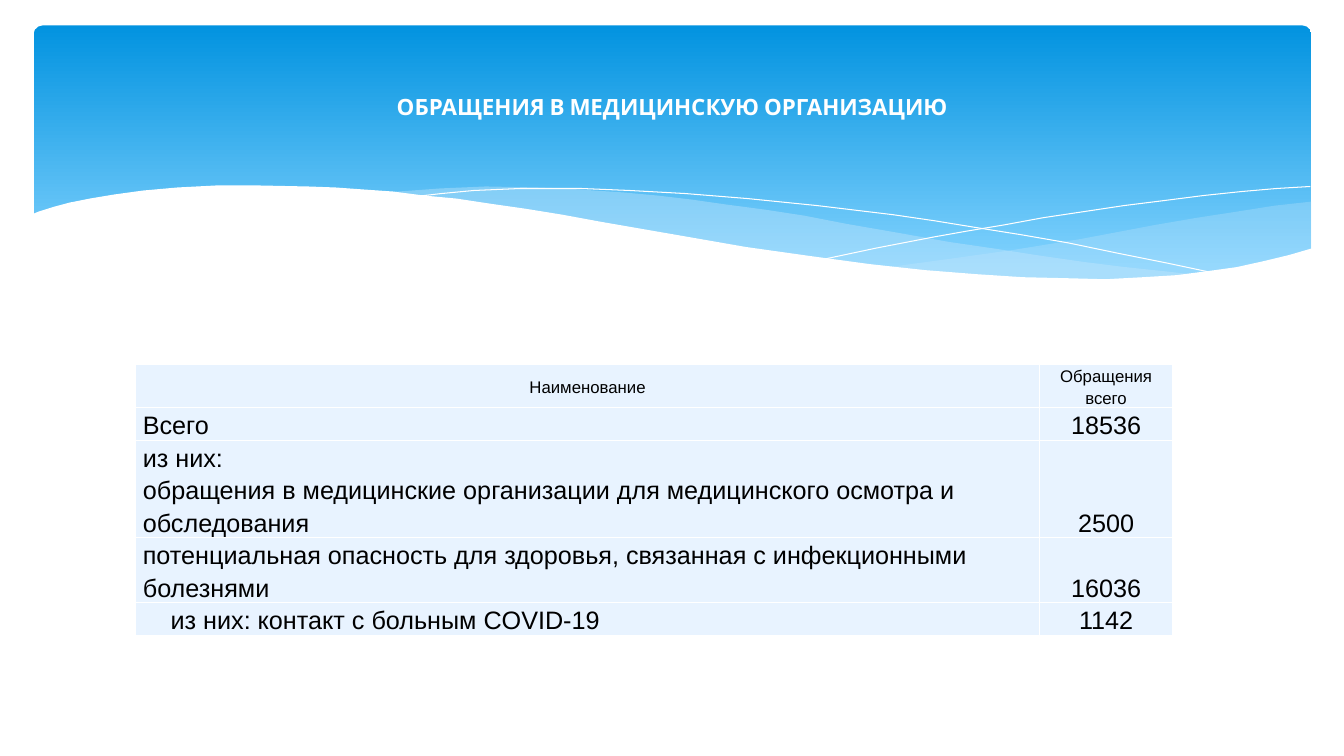
import dataclasses

import pptx
import pptx.dml.color
import pptx.enum.shapes
import pptx.enum.text
import pptx.oxml
import pptx.oxml.ns
import pptx.util
from pptx.util import Cm

ALIGN = pptx.enum.text.PP_ALIGN
ANCHOR = pptx.enum.text.MSO_ANCHOR


@dataclasses.dataclass(frozen=True)
class Theme:
    white: str = "FFFFFF"
    black: str = "000000"
    sky_top: str = "0293E0"
    sky_bottom: str = "83D3FE"
    wave: str = "C6E7FC"
    cell: str = "E8F3FF"
    title_font: str = "Cabin"
    table_font: str = "Arial"
    title_size: int = 16
    head_size: int = 12
    body_size: int = 18


# Wave outlines, in hundredths of an inch
RIGHT_WAVE = [
    (1301, 200), (1265, 204), (1227, 210), (1188, 216), (1147, 223), (1073, 237),
    (1005, 248), (941, 257), (882, 265), (921, 269), (958, 272), (993, 275),
    (1025, 277), (1071, 278), (1113, 277), (1151, 275), (1186, 272), (1218, 267),
    (1247, 262), (1284, 252), (1301, 247),
]
LONG_WAVE = [
    (1190, 273), (1154, 269), (1116, 265), (1076, 260), (1034, 254), (989, 247),
    (941, 240), (891, 231), (839, 222), (798, 214), (759, 208), (721, 203),
    (686, 198), (652, 194), (619, 191), (589, 189), (560, 187), (532, 186),
    (482, 185), (437, 187), (382, 191), (431, 196), (483, 203), (539, 211),
    (599, 222), (654, 232), (706, 240), (755, 248), (802, 255), (846, 261),
    (887, 266), (926, 270), (963, 274), (998, 276), (1046, 278), (1104, 278),
    (1143, 277), (1190, 273),
]
FALLING_LINE = [
    (412, 195), (438, 192), (470, 189), (516, 187), (577, 187), (625, 189),
    (680, 192), (742, 197), (811, 204), (886, 213), (927, 219), (970, 226),
    (1014, 233), (1060, 241), (1108, 251), (1158, 261), (1210, 272),
]
RISING_LINE = [
    (818, 257), (870, 246), (927, 235), (961, 229), (997, 223), (1035, 216),
    (1075, 210), (1115, 204), (1155, 199), (1194, 194), (1232, 190),
    (1267, 187), (1300, 185),
]
WHITE_WAVE = [
    (1303, 246), (1279, 253), (1254, 259), (1227, 265), (1198, 269), (1167, 273),
    (1134, 275), (1097, 277), (1058, 276), (1015, 275), (969, 272), (918, 268),
    (863, 262), (804, 254), (740, 245), (671, 233), (596, 220), (558, 213),
    (521, 207), (486, 202), (453, 197), (421, 194), (390, 190), (361, 188),
    (333, 186), (306, 185), (258, 184), (214, 184), (176, 186), (142, 189),
    (113, 193), (89, 197), (69, 201), (54, 205), (38, 210), (31, 213),
    (31, 329), (1303, 329),
]

COLUMNS = [22.78, 3.35]
ROW_HEIGHTS = [1.07, 0.82, 2.46, 1.63, 0.82]
ROWS = [
    ("Наименование", "Обращения\nвсего"),
    ("Всего", "18536"),
    ("из них:\nобращения в медицинские организации для медицинского осмотра "
     "и обследования", "2500"),
    ("потенциальная опасность для здоровья, связанная с инфекционными болезнями",
     "16036"),
    ("из них: контакт с больным COVID-19", "1142"),
]


def rgb(value):
    return pptx.dml.color.RGBColor.from_string(value)


class SlideBuilder:
    def __init__(self, page, theme):
        self.page = page
        self.theme = theme

    def format_text(self, frame, font, size, color, align, bold=False, spacing=None):
        for para in frame.paragraphs:
            para.alignment = align
            para.line_spacing = spacing
            for span in para.runs:
                span.font.name = font
                span.font.size = pptx.util.Pt(size)
                span.font.bold = bold
                span.font.color.rgb = rgb(color)

    def backdrop(self, left, top, width, height):
        box = self.page.shapes.add_shape(
            pptx.enum.shapes.MSO_SHAPE.ROUNDED_RECTANGLE,
            Cm(left), Cm(top), Cm(width), Cm(height))
        box.adjustments[0] = 0.034
        box.shadow.inherit = False
        box.line.fill.background()
        box.fill.gradient()
        box.fill.gradient_angle = 270
        colors = (self.theme.sky_top, self.theme.sky_bottom)
        for stop, color, position in zip(box.fill.gradient_stops, colors, (0, 0.9)):
            stop.color.rgb = rgb(color)
            stop.position = position

    def outline(self, points, closed):
        builder = self.page.shapes.build_freeform(*points[0], scale=Cm(0.0254))
        builder.add_line_segments(points[1:], close=closed)
        shape = builder.convert_to_shape()
        shape.shadow.inherit = False
        return shape

    def wave(self, points, color, opacity=100):
        shape = self.outline(points, True)
        shape.line.fill.background()
        shape.fill.solid()
        shape.fill.fore_color.rgb = rgb(color)
        if opacity < 100:
            tone = shape._element.spPr.find(".//" + pptx.oxml.ns.qn("a:srgbClr"))
            tone.append(pptx.oxml.parse_xml(
                f'<a:alpha {pptx.oxml.ns.nsdecls("a")} val="{opacity * 1000}"/>'))

    def curve(self, points):
        shape = self.outline(points, False)
        shape.fill.background()
        shape.line.color.rgb = rgb(self.theme.white)
        shape.line.width = 0

    def title(self, text, left, top, width, height):
        box = self.page.shapes.title
        box.left, box.top, box.width, box.height = map(Cm, (left, top, width, height))
        frame = box.text_frame
        frame.text = text
        frame.vertical_anchor = ANCHOR.MIDDLE
        self.format_text(frame, self.theme.title_font, self.theme.title_size,
                         self.theme.white, ALIGN.CENTER, bold=True)
        # Bring the title in front of the waves
        box._element.getparent().append(box._element)

    def border(self, cell):
        properties = cell._tc.get_or_add_tcPr()
        for index, side in enumerate(("lnL", "lnR", "lnT", "lnB")):
            properties.insert(index, pptx.oxml.parse_xml(
                f'<a:{side} {pptx.oxml.ns.nsdecls("a")} w="12700"><a:solidFill>'
                f'<a:srgbClr val="{self.theme.white}"/></a:solidFill></a:{side}>'))

    def table(self, rows, left, top, columns, heights):
        grid = self.page.shapes.add_table(
            len(rows), len(columns), Cm(left), Cm(top),
            Cm(sum(columns)), Cm(sum(heights))).table
        for column, width in zip(grid.columns, columns):
            column.width = Cm(width)
        for r, (texts, height) in enumerate(zip(rows, heights)):
            grid.rows[r].height = Cm(height)
            for c, text in enumerate(texts):
                cell = grid.cell(r, c)
                cell.text_frame.text = text
                cell.margin_left = cell.margin_right = Cm(0.18)
                cell.margin_top = cell.margin_bottom = 0
                cell.vertical_anchor = ANCHOR.BOTTOM if r and c else ANCHOR.MIDDLE
                cell.fill.solid()
                cell.fill.fore_color.rgb = rgb(self.theme.cell)
                size = self.theme.body_size if r else self.theme.head_size
                align = ALIGN.LEFT if r and not c else ALIGN.CENTER
                self.format_text(cell.text_frame, self.theme.table_font, size,
                                 self.theme.black, align, spacing=1.15)
                self.border(cell)
        return grid


def main():
    deck = pptx.Presentation()
    deck.slide_width, deck.slide_height = Cm(33.87), Cm(19.05)
    theme = Theme()
    slide = SlideBuilder(deck.slides.add_slide(deck.slide_layouts[5]), theme)

    # Header with waves
    slide.backdrop(0.85, 0.64, 32.2, 6.86)
    slide.wave(RIGHT_WAVE, theme.wave, 29)
    slide.wave(LONG_WAVE, theme.wave, 40)
    slide.curve(FALLING_LINE)
    slide.curve(RISING_LINE)
    slide.wave(WHITE_WAVE, theme.white)

    # Table of visits, with its last row indented
    visits = slide.table(ROWS, 3.42, 9.18, COLUMNS, ROW_HEIGHTS)
    visits.cell(len(ROWS) - 1, 0).margin_left = Cm(0.88)

    # Title
    slide.title("ОБРАЩЕНИЯ В МЕДИЦИНСКУЮ ОРГАНИЗАЦИЮ", 1.7, 0.94, 30.48, 3.48)

    deck.save("out.pptx")


if __name__ == "__main__":
    main()
